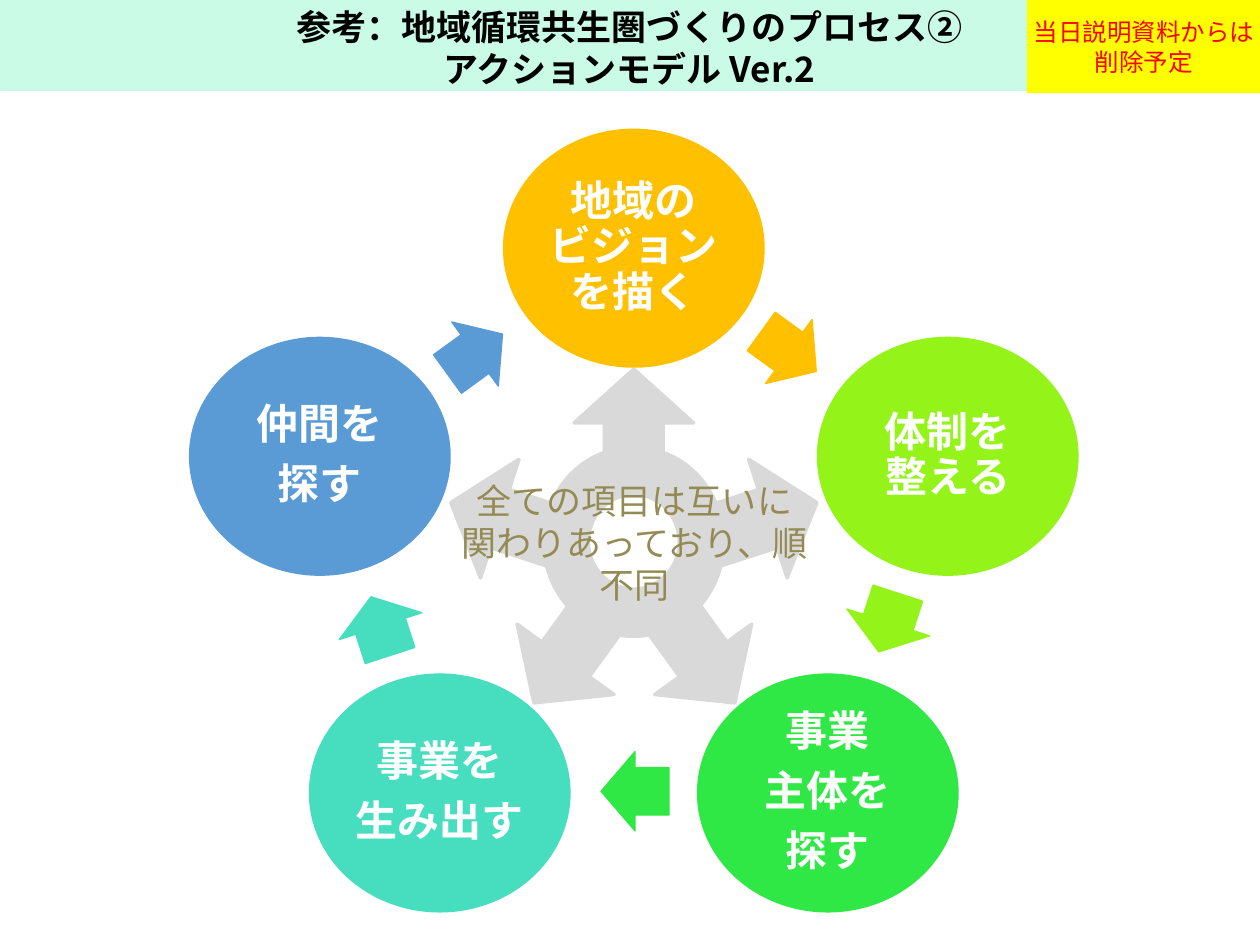
import math
from dataclasses import dataclass

import pptx
import pptx.util
import pptx.dml.color
import pptx.enum.shapes
import pptx.enum.text
import pptx.oxml.ns
from lxml import etree
from pptx.util import Inches, Pt

SHAPE = pptx.enum.shapes.MSO_SHAPE
NOTO, CABIN = "Noto Sans CJK JP", "Cabin"
GREY = "D9D9D9"


@dataclass
class Step:
    """One circle of the cycle, and the arrow leading out of it."""
    paragraphs: list[str]
    color: str
    arrow_center: tuple[float, float]
    arrow_size: tuple[float, float]


@dataclass
class Spoke:
    """One grey arrow pointing from the hub to a circle."""
    center: tuple[float, float]
    size: tuple[float, float]


def rgb(color: str) -> pptx.dml.color.RGBColor:
    return pptx.dml.color.RGBColor.from_string(color)


def add_shape(s, kind, center: tuple[float, float], size: tuple[float, float],
              fill: str, line: str = "", width: float = 0, rotation: float = 0,
              adjustments: tuple[float, ...] = ()):
    (x, y), (w, h) = center, size
    sp = s.shapes.add_shape(kind, Inches(x - w / 2), Inches(y - h / 2),
                            Inches(w), Inches(h))
    sp.shadow.inherit = False
    sp.rotation = rotation
    sp.fill.solid()
    sp.fill.fore_color.rgb = rgb(fill)
    if line:
        sp.line.color.rgb = rgb(line)
        sp.line.width = Pt(width)
    else:
        sp.line.fill.background()
    for i, value in enumerate(adjustments):
        sp.adjustments[i] = value
    return sp


def write(sp, paragraphs: list[str], size: float, font: str, color: str,
          bold: bool = False, insets: tuple[float, float] = (0.1, 0.05),
          line_spacing: float = 1.0, space_after: float = 0) -> None:
    tf = sp.text_frame
    tf.word_wrap = True
    tf.vertical_anchor = pptx.enum.text.MSO_ANCHOR.MIDDLE
    tf.margin_left = tf.margin_right = Inches(insets[0])
    tf.margin_top = tf.margin_bottom = Inches(insets[1])
    for i, text in enumerate(paragraphs):
        p = tf.add_paragraph() if i else tf.paragraphs[0]
        p.text = text
        p.alignment = pptx.enum.text.PP_ALIGN.CENTER
        p.line_spacing = line_spacing
        p.space_after = Pt(space_after)
        p.font.size = Pt(size)
        p.font.bold = bold
        p.font.color.rgb = rgb(color)
        p.font.name = font
        # East Asian characters take their own typeface
        ea = etree.SubElement(p.font._element, pptx.oxml.ns.qn("a:ea"))
        ea.set("typeface", font)


def add_text(s, left: float, top: float, width: float, height: float):
    return s.shapes.add_textbox(Inches(left), Inches(top), Inches(width), Inches(height))


prs = pptx.Presentation()
prs.slide_width, prs.slide_height = Inches(10), Inches(7.5)
s = prs.slides.add_slide(prs.slide_layouts[6])

# Title band and note
add_shape(s, SHAPE.RECTANGLE, (5.01, 0.36), (10, 0.71), "C9FBE7", "C9FBE7", 1.5)
write(add_text(s, 0, 0.13, 9.99, 0.49),
      ["参考：地域循環共生圏づくりのプロセス②", "アクションモデル Ver.2"],
      20, NOTO, "000000", bold=True, insets=(0.07, 0.04))
note = add_shape(s, SHAPE.RECTANGLE, (9.08, 0.37), (1.86, 0.74), "FFFF00")
write(note, ["当日説明資料からは削除予定"], 14, NOTO, "FF0000", insets=(0, 0))

# Cycle: circles on a pentagon, clockwise from the top
LONG, SHORT = (0.54, 0.63), (0.49, 0.69)
STEPS = [
    Step(["地域の\nビジョンを描く"], "FFC000", (6.26, 2.79), LONG),
    Step(["体制を\n整える"], "94F319", (7.05, 4.94), SHORT),
    Step(["事業", "主体を", "探す"], "30E845", (5.04, 6.28), LONG),
    Step(["事業を", "生み出す"], "46DEBF", (3.02, 4.97), SHORT),
    Step(["仲間を", "探す"], "5B9BD5", (3.77, 2.81), LONG),
]
for i, step in enumerate(STEPS):
    angle = math.radians(72 * i)
    center = (5.03 + 2.62 * math.sin(angle), 4.36 - 2.39 * math.cos(angle))
    circle = add_shape(s, SHAPE.OVAL, center, (2.05, 1.87), step.color, step.color, 2)
    write(circle, step.paragraphs, 24, CABIN, "FFFFFF", bold=True,
          insets=(0.02, 0.05), line_spacing=0.9, space_after=8.4)
    add_shape(s, SHAPE.RIGHT_ARROW, step.arrow_center, step.arrow_size, step.color,
              step.color, 0.75, 36 + 72 * i, (0.6, 0.5))

# Hub: five arrows and a ring
UPRIGHT, WIDE = (0.95, 0.96), (0.99, 0.91)
SPOKES = [
    Spoke((5.03, 3.41), UPRIGHT),
    Spoke((6.05, 4.13), WIDE),
    Spoke((5.55, 5.19), UPRIGHT),
    Spoke((4.52, 5.19), UPRIGHT),
    Spoke((4.01, 4.13), WIDE),
]
for i, spoke in enumerate(SPOKES):
    add_shape(s, SHAPE.UP_ARROW, spoke.center, spoke.size, GREY, GREY, 2,
              72 * i, (0.49, 0.45))
for size, fill in (((1.43, 1.5), GREY), ((0.72, 0.75), "FFFFFF")):
    add_shape(s, SHAPE.OVAL, (5.03, 4.3), size, fill, GREY, 2)

# Message over the hub
write(add_text(s, 3.56, 3.23, 2.95, 2.15),
      ["全ての項目は互いに関わりあっており、順不同"], 20, CABIN, "948A54")

prs.save("out.pptx")
